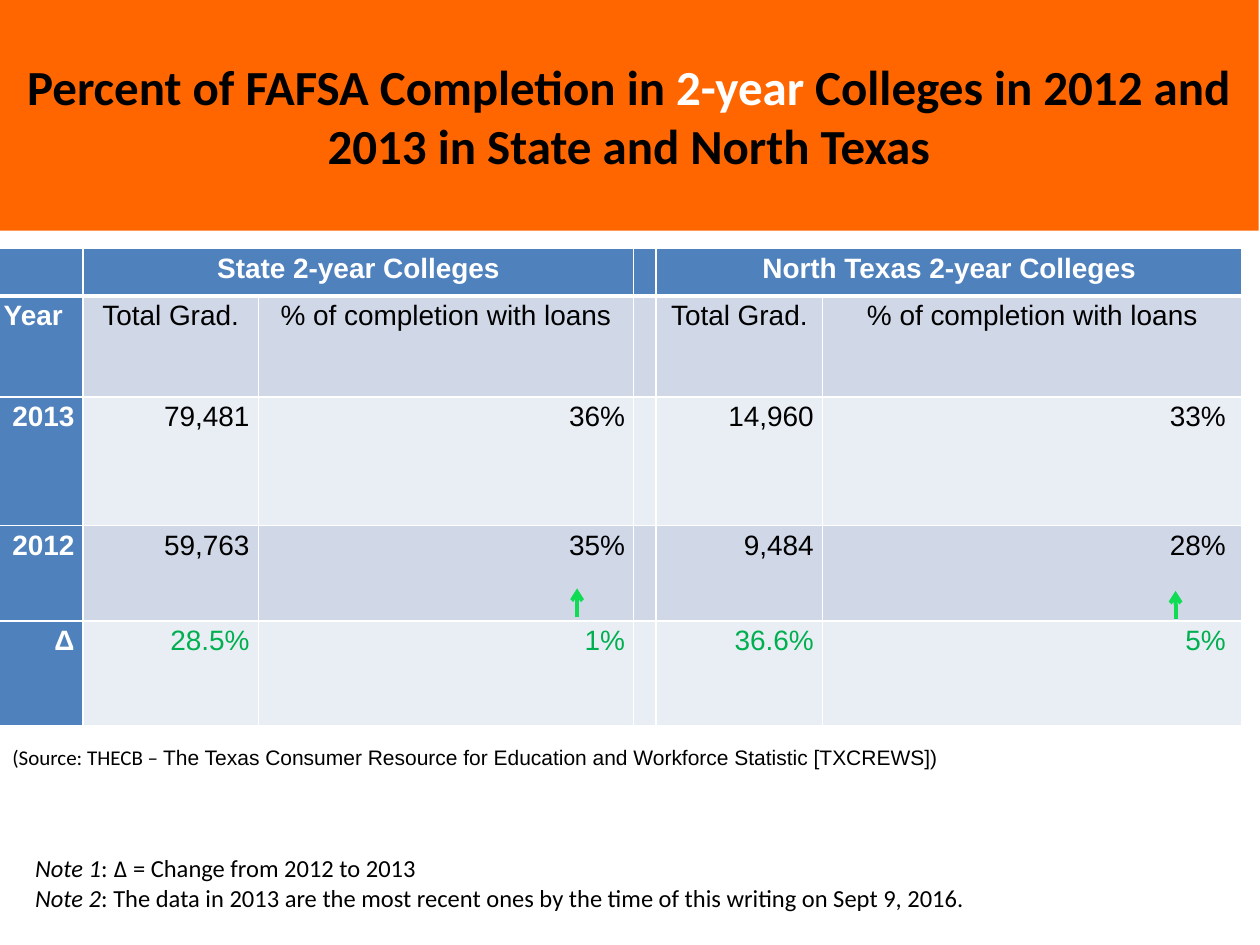
from dataclasses import dataclass

from lxml.etree import SubElement
from pptx import Presentation
from pptx.dml.color import RGBColor
from pptx.enum.shapes import MSO_CONNECTOR as Conn
from pptx.enum.text import MSO_ANCHOR as Anchor, MSO_AUTO_SIZE as AutoSize, PP_ALIGN as Align
from pptx.oxml.ns import qn
from pptx.util import Inches, Pt


@dataclass(frozen=True)
class Theme:
    banner: str = "FF6600"
    header: str = "4F81BD"
    bands: tuple = ("D0D8E8", "E9EDF4")
    ink: str = "000000"
    light: str = "FFFFFF"
    change: str = "00B050"
    arrow: str = "0FDB53"
    body: str = "Calibri"
    table: str = "Arial"
    symbol: str = "Karla"
    title_size: int = 28
    table_size: int = 16
    source_size: int = 12
    note_size: int = 14


T = Theme()
SLIDE_W, SLIDE_H = Inches(10), Inches(7.5)

# Column widths and row heights as percent of the slide
COLS = (7, 13.9, 29.8, 1.6, 13.2, 33.3)
ROWS = (5.07, 10.67, 13.6, 10.13, 11.07)
LABELS = ("Total Grad.", "% of completion with loans")
DATA = (
    ("", "State 2-year Colleges", "", "", "North Texas 2-year Colleges", ""),
    ("Year", *LABELS, "", *LABELS),
    ("2013", "79,481", "36%", "", "14,960", "33%"),
    ("2012", "59,763", "35%", "", "9,484", "28%"),
    ("Δ", "28.5%", "1%", "", "36.6%", "5%"),
)


def px(share):
    return round(SLIDE_W * share / 100)


def py(share):
    return round(SLIDE_H * share / 100)


def box(left, top, width, height):
    return px(left), py(top), px(width), py(height)


def rgb(value):
    return RGBColor.from_string(value)


def add_text(p, text, font=T.body, size=T.note_size, color=T.ink, bold=False, italic=False):
    r = p.add_run()
    r.text = text
    f = r.font
    f.name, f.size, f.bold, f.italic = font, Pt(size), bold, italic
    f.color.rgb = rgb(color)


def add_title(s):
    sp = s.shapes.title
    sp.left, sp.top, sp.width, sp.height = box(-0.1, 0, 100, 24.4)
    sp.fill.solid()
    sp.fill.fore_color.rgb = rgb(T.banner)
    tf = sp.text_frame
    tf.vertical_anchor = Anchor.MIDDLE
    p = tf.paragraphs[0]
    p.alignment = Align.CENTER
    for text, color in (
        ("Percent of FAFSA Completion in ", T.ink),
        ("2-year", T.light),
        (" Colleges in 2012 and 2013 in State and North Texas", T.ink),
    ):
        add_text(p, text, size=T.title_size, color=color, bold=True)


def add_text_box(s, place, lines):
    """Each line is a list of (text, format) runs."""
    tf = s.shapes.add_textbox(*place).text_frame
    tf.word_wrap = True
    tf.auto_size = AutoSize.SHAPE_TO_FIT_TEXT
    tf.vertical_anchor = Anchor.MIDDLE
    for i, runs in enumerate(lines):
        p = tf.add_paragraph() if i else tf.paragraphs[0]
        for text, style in runs:
            add_text(p, text, **style)


def set_borders(cell, **widths):
    tc_pr = cell._tc.get_or_add_tcPr()
    for side in "LRTB":
        ln = SubElement(tc_pr, qn(f"a:ln{side}"), w=str(Pt(widths.get(side, 1))))
        SubElement(SubElement(ln, qn("a:solidFill")), qn("a:srgbClr"), val=T.light)


def format_cell(cell, text, row, col):
    head = row == 0 or col == 0
    number = row > 1
    # A thick rule parts the header row from the body
    set_borders(cell, **{0: {"B": 3}, 1: {"T": 3}}.get(row, {}))
    cell.fill.solid()
    cell.fill.fore_color.rgb = rgb(T.header if head else T.bands[(row - 1) % 2])
    cell.margin_top = cell.margin_bottom = 0
    cell.margin_left = Inches(0.07)
    cell.margin_right = Inches(0.13 if number and col == len(COLS) - 1 else 0.07)
    p = cell.text_frame.paragraphs[0]
    p.font.size = Pt(T.table_size)
    if not text:
        return
    p.line_spacing = 1.15
    p.space_after = Pt(10 if number else 6)
    if row in (2, 3):
        p.space_before = Pt(12)
    if number:
        p.alignment = Align.RIGHT
    else:
        p.alignment = Align.LEFT if col == 0 else Align.CENTER
    body_color = T.change if row == len(ROWS) - 1 else T.ink
    add_text(p, text, font=T.table, size=T.table_size,
             color=T.light if head else body_color, bold=head)


def add_table(s):
    place = box(-0.4, 26.27, sum(COLS), sum(ROWS))
    table = s.shapes.add_table(len(ROWS), len(COLS), *place).table
    table.first_col = True
    for column, width in zip(table.columns, COLS):
        column.width = px(width)
    for row, height in zip(table.rows, ROWS):
        row.height = py(height)
    for first in (1, 4):
        table.cell(0, first).merge(table.cell(0, first + 1))
    for i, texts in enumerate(DATA):
        for j, text in enumerate(texts):
            format_cell(table.cell(i, j), text, i, j)


def add_up_arrow(s, x, bottom, top):
    c = s.shapes.add_connector(Conn.STRAIGHT, px(x), py(bottom), px(x), py(top))
    c.line.color.rgb = rgb(T.arrow)
    c.line.width = Pt(2.25)
    SubElement(c.line._get_or_add_ln(), qn("a:tailEnd"), type="arrow")
    SubElement(c._element.spPr, qn("a:effectLst"))


def main():
    prs = Presentation()
    prs.slide_width, prs.slide_height = SLIDE_W, SLIDE_H
    s = prs.slides.add_slide(prs.slide_layouts[5])

    add_title(s)
    add_table(s)

    # Source line
    small = {"size": T.source_size}
    add_text_box(s, box(0, 78.13, 89.1, 4), [[
        ("(Source: THECB – ", small),
        ("The Texas Consumer Resource for Education and Workforce Statistic [TXCREWS])",
         {**small, "font": T.table}),
    ]])

    # Growth marks above the change in completion
    add_up_arrow(s, 45.8, 65.33, 62.27)
    add_up_arrow(s, 93.3, 65.47, 62.53)

    # Notes
    label = {"italic": True}
    add_text_box(s, box(1.8, 89.6, 96.6, 7.6), [
        [("Note 1", label), (": ", {}), ("Δ", {"font": T.symbol}),
         (" = Change from 2012 to 2013", {})],
        [("Note 2", label),
         (": The data in 2013 are the most recent ones by the time of this writing"
          " on Sept 9, 2016.", {})],
    ])
    prs.save("out.pptx")


if __name__ == "__main__":
    main()
